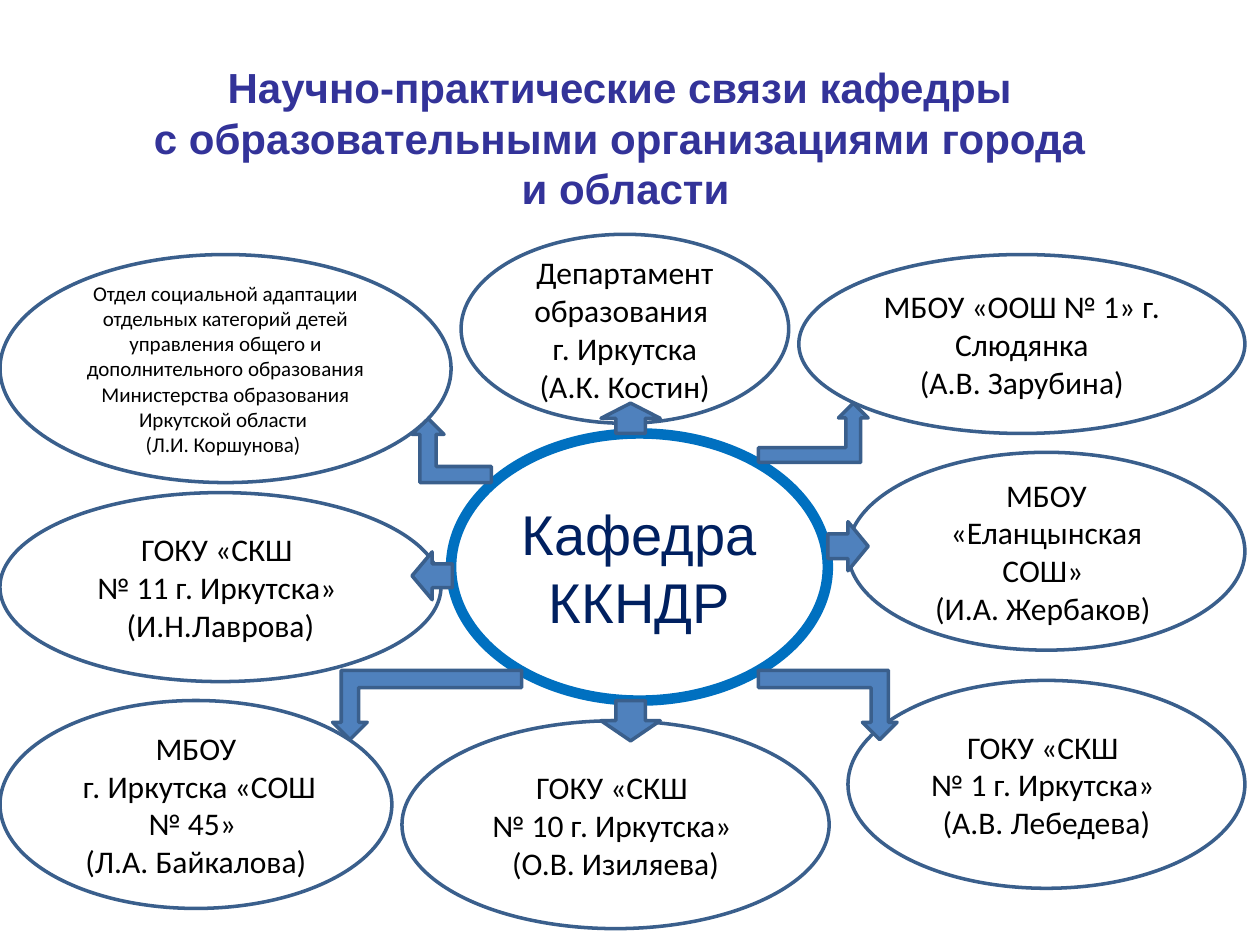
from dataclasses import dataclass

from pptx import Presentation
from pptx.dml.color import RGBColor as RGB
from pptx.enum.shapes import MSO_SHAPE as Kind
from pptx.enum.text import MSO_ANCHOR as Anchor, PP_ALIGN as Align
from pptx.oxml.ns import qn
from pptx.util import Inches, Pt

COLS, ROWS = 100, 75


@dataclass(frozen=True)
class Theme:
    """Colours, fonts and type sizes of the slide."""
    title: str = "333399"
    hub: str = "002060"
    ring: str = "0070C0"
    edge: str = "3A5F8C"
    arrow: str = "4F81BD"
    paper: str = "FFFFFF"
    ink: str = "000000"
    head: str = "Arial"
    body: str = "Calibri"
    huge: int = 32
    big: int = 24
    mid: int = 18
    small: int = 12
    thick: int = 6
    thin: int = 2


T = Theme()

LINKS = [
    ((36.6, 0.6, 26, 15), ["Департамент образования ", "г. Иркутска (А.К. Костин)"]),
    ((0, 21.1, 35, 15), ["ГОКУ «СКШ ", "№ 11 г. Иркутска» ", "(И.Н.Лаврова)"]),
    ((0, 37.6, 31.1, 16.5), ["МБОУ", " г. Иркутска «СОШ № 45» ", "(Л.А. Байкалова)"]),
    ((31.9, 39.2, 33.9, 16.5), ["ГОКУ «СКШ ", "№ 10 г. Иркутска» ", "(О.В. Изиляева)"]),
    ((67.3, 17.9, 31.5, 15.7), ["МБОУ «Еланцынская СОШ» ", "(И.А. Жербаков) "]),
    ((67.3, 36, 31.5, 16.5), ["ГОКУ «СКШ ", "№ 1 г. Иркутска» ", "(А.В. Лебедева)"]),
    ((63.4, 2.2, 35.4, 14.2), ["МБОУ «ООШ № 1» г. Слюдянка", "(А.В. Зарубина)"]),
]
OFFICE = ((0, 2.2, 35.8, 18.1), [
    "Отдел социальной адаптации отдельных категорий детей управления общего и "
    "дополнительного образования Министерства образования Иркутской области ",
    "(Л.И. Коршунова) "])
ARROWS = [
    (Kind.UP_ARROW, (47.7, 14, 4.7, 2.4), ""),
    (Kind.RIGHT_ARROW, (65.7, 23.4, 3.2, 3.9), ""),
    (Kind.LEFT_ARROW, (32.7, 25.8, 3.2, 3.8), ""),
    (Kind.DOWN_ARROW, (47.7, 37.6, 4.7, 3.2), ""),
    (Kind.BENT_UP_ARROW, (60.2, 14, 8.7, 4.7), ""),
    (Kind.BENT_UP_ARROW, (26.4, 35.2, 15, 5.5), "HV"),
    (Kind.BENT_UP_ARROW, (32.7, 15.2, 6.3, 5.1), "H"),
    (Kind.BENT_UP_ARROW, (60.2, 35.2, 11, 5.5), "V"),
]


def place(box, part):
    """Turn grid units inside a box into slide lengths."""
    x, y, w, h = part
    cell = Inches(10) / COLS
    return [round(n * cell) for n in (box[0] + x, box[1] + y, w, h)]


def write(shape, lines, font, size, color, bold=False, anchor=Anchor.MIDDLE):
    """Fill a shape with centred paragraphs of one format."""
    frame = shape.text_frame
    frame.word_wrap = True
    frame.vertical_anchor = anchor
    for i, line in enumerate(lines):
        para = frame.add_paragraph() if i else frame.paragraphs[0]
        para.alignment = Align.CENTER
        run = para.add_run()
        run.text = line
        run.font.name, run.font.size, run.font.bold = font, Pt(size), bold
        run.font.color.rgb = RGB.from_string(color)


def draw(slide, kind, spot, fill, line, width):
    """Add a flat preset shape with a solid fill and outline."""
    shape = slide.shapes.add_shape(kind, *spot)
    shape.shadow.inherit = False
    shape.fill.solid()
    shape.fill.fore_color.rgb = RGB.from_string(fill)
    shape.line.color.rgb = RGB.from_string(line)
    shape.line.width = Pt(width)
    return shape


def heading(slide, box):
    """Place the three-line title in its box."""
    spot = place(box, (0, 0, *box[2:]))
    lines = ["Научно-практические связи кафедры ",
             "с образовательными организациями города ", "и области"]
    write(slide.shapes.add_textbox(*spot), lines, T.head, T.big, T.title,
          bold=True, anchor=Anchor.TOP)


def center(slide, box):
    """Place the department oval in the middle of the map."""
    oval = draw(slide, Kind.OVAL, place(box, (35.8, 16.4, 29.9, 21.2)),
                T.paper, T.ring, T.thick)
    write(oval, ["Кафедра ККНДР"], T.head, T.huge, T.hub)


def partners(slide, box, items, size):
    """Place partner ovals inside the map."""
    for part, lines in items:
        oval = draw(slide, Kind.OVAL, place(box, part), T.paper, T.edge, T.thin)
        write(oval, lines, T.body, size, T.ink)


def arrows(slide, box):
    """Place block arrows from the department to its partners."""
    for kind, part, flips in ARROWS:
        arrow = draw(slide, kind, place(box, part), T.arrow, T.edge, T.thin)
        frame = arrow._element.spPr.find(qn("a:xfrm"))
        for axis in flips:
            frame.set("flip" + axis, "1")


def main():
    """Build and save the slide."""
    deck = Presentation()
    deck.slide_width, deck.slide_height = Inches(10), Inches(7.5)
    slide = deck.slides.add_slide(deck.slide_layouts[6])
    area = (0, 18, COLS, ROWS - 18)
    center(slide, area)
    heading(slide, (8.3, 4.4, 82.7, 13.1))
    partners(slide, area, LINKS, T.mid)
    arrows(slide, area)
    partners(slide, area, [OFFICE], T.small)
    deck.save("out.pptx")


if __name__ == "__main__":
    main()
